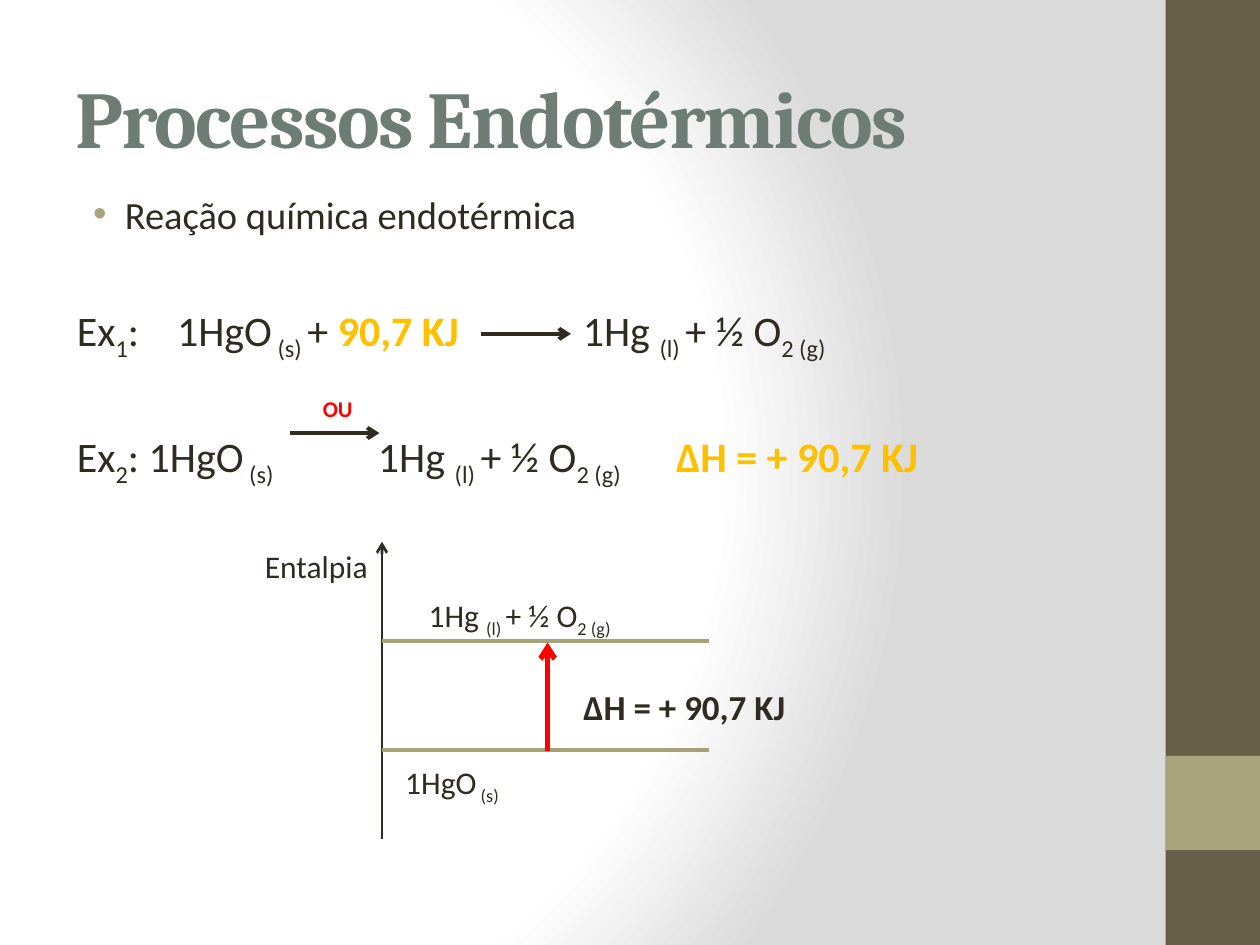
from dataclasses import dataclass
from typing import NamedTuple

from lxml.etree import SubElement
from pptx import Presentation
from pptx.dml.color import RGBColor
from pptx.enum.shapes import MSO_CONNECTOR as Connector, MSO_SHAPE as Preset
from pptx.enum.text import MSO_ANCHOR as Anchor
from pptx.oxml import parse_xml
from pptx.oxml.ns import nsdecls, qn
from pptx.util import Cm, Pt

INK = RGBColor(0x2F, 0x2B, 0x20)
SLATE = RGBColor(0x6D, 0x7D, 0x76)
AMBER = RGBColor(0xFF, 0xC0, 0x00)
RED = RGBColor(0xFF, 0x00, 0x00)
BROWN = RGBColor(0x67, 0x5E, 0x47)
OLIVE = RGBColor(0xA9, 0xA5, 0x7C)
LEVEL = RGBColor(0xA6, 0xA2, 0x78)

ASCENT = 0.952  # share of the font size above the baseline
LETTER_ROOM = 0.75  # width allowed per letter, as a share of the font size
CM_PER_PT = 2.54 / 72


class Span(NamedTuple):
    text: str
    lowered: bool = False
    color: RGBColor = INK
    bold: bool = False


@dataclass
class Label:
    """A line of text placed by its left edge and baseline, in cm."""
    left: float
    baseline: float
    size: int
    spans: list[Span]


@dataclass
class Line:
    start: tuple[float, float]
    end: tuple[float, float]
    color: RGBColor
    width: float
    arrow: bool = True


@dataclass
class Band:
    top: float
    height: float
    color: RGBColor


REACTANT = [Span("1HgO"), Span(" (s) ", lowered=True)]
PRODUCTS = [Span("1Hg "), Span("(l) ", lowered=True),
            Span("+ ½ O"), Span("2 (g)", lowered=True)]
HEAT = "ΔH = + 90,7 KJ"


def example(number: str) -> list[Span]:
    return [Span("Ex"), Span(number, lowered=True), Span(":")]


MARGIN = 1.55
EX1, EX2 = 6.95, 9.49
BULLET = Label(MARGIN, 4.58, 22, [Span("Reação química endotérmica")])
LABELS = [
    Label(MARGIN, EX1, 24, example("1")),
    Label(3.57, EX1, 24, REACTANT + [Span("+ "), Span("90,7 KJ", color=AMBER, bold=True)]),
    Label(11.75, EX1, 24, PRODUCTS),
    Label(6.51, 8.18, 22, [Span("OU", True, RED, True)]),
    Label(MARGIN, EX2, 24, example("2") + [Span(" ")] + REACTANT),
    Label(7.62, EX2, 24, PRODUCTS),
    Label(13.63, EX2, 24, [Span(HEAT, color=AMBER, bold=True)]),
    Label(5.34, 11.63, 18, [Span("Entalpia")]),
    Label(8.64, 12.62, 18, PRODUCTS),
    Label(11.76, 14.49, 20, [Span(HEAT, bold=True)]),
    Label(8.17, 15.98, 18, REACTANT),
]

AXIS, LEVEL_END, HIGH, LOW = 7.7, 14.3, 12.93, 15.11
LINES = [
    Line((9.7, 6.73), (11.51, 6.73), INK, 2.25),
    Line((5.84, 8.73), (7.65, 8.73), INK, 2.25),
    Line((AXIS, 16.92), (AXIS, 10.92), INK, 1.5),
    *(Line((AXIS, y), (LEVEL_END, y), LEVEL, 2.25, arrow=False) for y in (HIGH, LOW)),
    Line((11.04, 15.14), (11.04, 12.95), RED, 3),
]

BANDS = [Band(0, 19.05, BROWN), Band(15.24, 1.9, OLIVE)]


def set_background(slide) -> None:
    """Radial fade from white to grey."""
    slide.background.fill.gradient()
    plain = slide.element.find(".//" + qn("a:gradFill"))
    stops = "".join(
        f'<a:gs pos="{share * 1000}"><a:srgbClr val="{color}"/></a:gs>'
        for share, color in ((0, "FFFFFF"), (75, "FFFFFF"), (100, "DADADA")))
    radial = parse_xml(
        f'<a:gradFill {nsdecls("a")} rotWithShape="1"><a:gsLst>{stops}</a:gsLst>'
        '<a:path path="circle"><a:fillToRect l="20000" t="50000" r="100000" b="50000"/>'
        '</a:path></a:gradFill>')
    plain.getparent().replace(plain, radial)


def add_band(slide, band: Band) -> None:
    block = slide.shapes.add_shape(
        Preset.RECTANGLE, Cm(23.5), Cm(band.top), Cm(1.9), Cm(band.height))
    block.shadow.inherit = False
    block.fill.solid()
    block.fill.fore_color.rgb = band.color
    block.line.fill.background()


def add_run(paragraph, span: Span, size: int, font_name: str = "Calibri"):
    run = paragraph.add_run()
    run.text = span.text
    font_format = {"name": font_name, "size": Pt(size), "bold": span.bold}
    for attribute, value in font_format.items():
        setattr(run.font, attribute, value)
    run.font.color.rgb = span.color
    properties = run.font._element
    if span.lowered:
        properties.set("baseline", "-25000")
    return properties


def add_frame(slide, left: float, top: float, width: float, height: float,
              anchor: Anchor = Anchor.TOP):
    frame = slide.shapes.add_textbox(Cm(left), Cm(top), Cm(width), Cm(height)).text_frame
    frame_format = {"margin_left": 0, "margin_right": 0, "margin_top": 0,
                    "margin_bottom": 0, "word_wrap": True, "vertical_anchor": anchor}
    for attribute, value in frame_format.items():
        setattr(frame, attribute, value)
    return frame


def add_title(slide) -> None:
    frame = add_frame(slide, 1.52, 0.76, 20.65, 3.18, Anchor.MIDDLE)
    title = Span("Processos Endotérmicos", color=SLATE, bold=True)
    add_run(frame.paragraphs[0], title, 46, "Cambria").set("spc", "-100")


def add_label(slide, label: Label):
    em = label.size * CM_PER_PT
    letters = sum(len(span.text) for span in label.spans)
    frame = add_frame(slide, label.left, label.baseline - ASCENT * em,
                      letters * em * LETTER_ROOM, 1.22 * em)
    paragraph = frame.paragraphs[0]
    for span in label.spans:
        add_run(paragraph, span, label.size)
    return paragraph


def add_bullet(paragraph) -> None:
    properties = paragraph._p.get_or_add_pPr()
    properties.set("marL", str(Cm(0.97)))
    properties.set("indent", str(Cm(-0.64)))
    color = SubElement(properties, qn("a:buClr"))
    SubElement(color, qn("a:srgbClr"), val=str(OLIVE))
    SubElement(properties, qn("a:buFont"), typeface="Arial")
    SubElement(properties, qn("a:buChar"), char="•")


def add_line(slide, line: Line) -> None:
    ends = [Cm(value) for value in (*line.start, *line.end)]
    connector = slide.shapes.add_connector(Connector.STRAIGHT, *ends)
    connector.line.color.rgb = line.color
    connector.line.width = Pt(line.width)
    if line.arrow:
        SubElement(connector.line._get_or_add_ln(), qn("a:tailEnd"), type="arrow")
    SubElement(connector._element.spPr, qn("a:effectLst"))


def main() -> None:
    deck = Presentation()
    deck.slide_width, deck.slide_height = Cm(25.4), Cm(19.05)
    slide = deck.slides.add_slide(deck.slide_layouts[6])
    set_background(slide)
    for band in BANDS:
        add_band(slide, band)
    add_title(slide)
    add_bullet(add_label(slide, BULLET))
    for line in LINES:
        add_line(slide, line)
    for label in LABELS:
        add_label(slide, label)
    deck.save("out.pptx")


if __name__ == "__main__":
    main()
